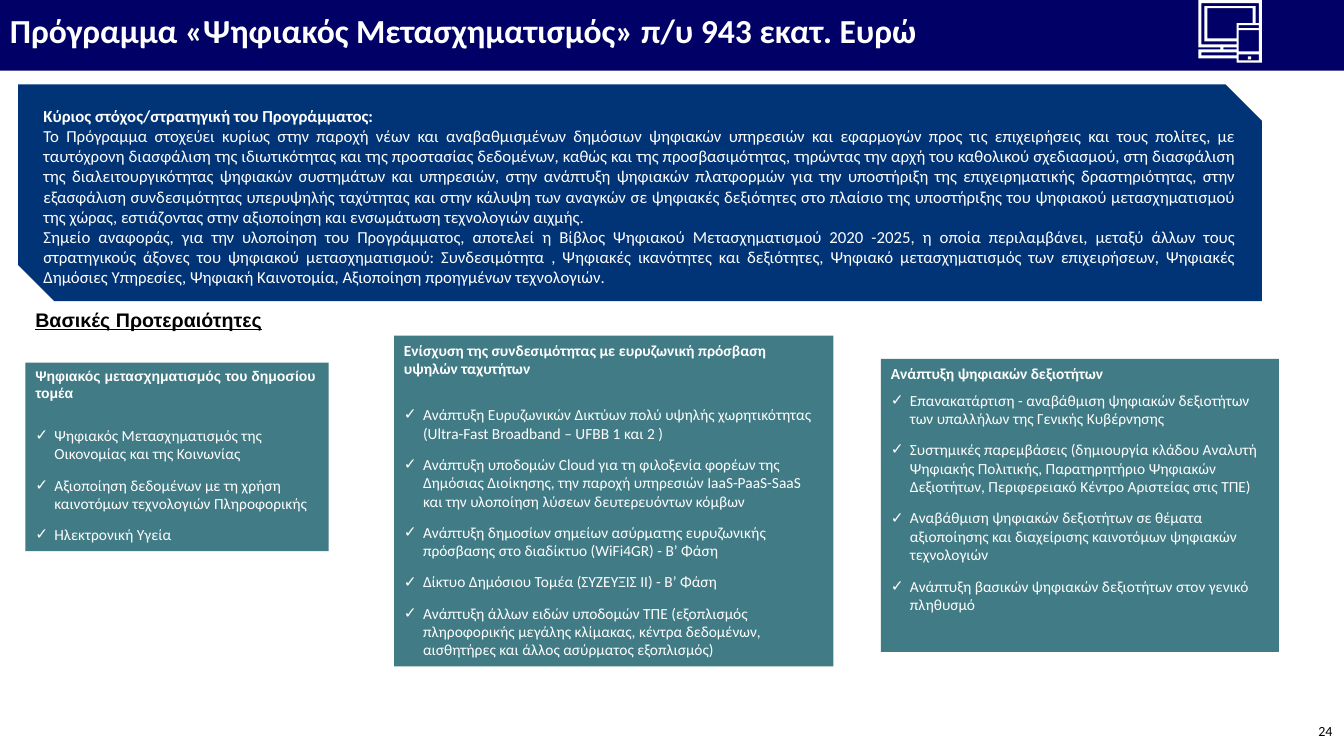
from dataclasses import dataclass

from lxml import etree
from pptx import Presentation
from pptx.dml.color import RGBColor
from pptx.enum.shapes import MSO_SHAPE
from pptx.enum.text import MSO_ANCHOR, MSO_AUTO_SIZE, PP_ALIGN
from pptx.oxml.ns import qn
from pptx.util import Cm, Pt

LEFT, RIGHT, JUSTIFY = PP_ALIGN.LEFT, PP_ALIGN.RIGHT, PP_ALIGN.JUSTIFY
TOP, MIDDLE = MSO_ANCHOR.TOP, MSO_ANCHOR.MIDDLE
NO_AUTOFIT = MSO_AUTO_SIZE.NONE
RECT, SNIPPED = MSO_SHAPE.RECTANGLE, MSO_SHAPE.SNIP_2_DIAG_RECTANGLE

WHITE, BLACK, NAVY, BLUE, TEAL = "FFFFFF", "000000", "000066", "013476", "417B85"
BULLET_INDENT = Cm(0.48)


@dataclass
class Box:
    left: float
    top: float
    width: float
    height: float


@dataclass
class Priority:
    idx: int
    box: Box
    heading: str
    font: str
    size: float
    first_gap: float
    items: list[str]


PRIORITIES = [
    Priority(2, Box(0.64, 9.14, 7.64, 4.75),
             "Ψηφιακός μετασχηματισμός του δημοσίου τομέα", "Arial", 10, 17.5, [
                 "Ψηφιακός Μετασχηματισμός της Οικονομίας και της Κοινωνίας",
                 "Αξιοποίηση δεδομένων με τη χρήση καινοτόμων τεχνολογιών Πληροφορικής",
                 "Ηλεκτρονική Υγεία"]),
    Priority(3, Box(9.93, 8.46, 11.07, 8.33),
             "Ενίσχυση της συνδεσιμότητας με ευρυζωνική πρόσβαση υψηλών ταχυτήτων",
             "Calibri", 11, 19.5, [
                 "Ανάπτυξη Ευρυζωνικών Δικτύων πολύ υψηλής χωρητικότητας "
                 "(Ultra-Fast Broadband – UFBB 1 και 2 )",
                 "Ανάπτυξη υποδομών Cloud για τη φιλοξενία φορέων της Δημόσιας Διοίκησης, "
                 "την παροχή υπηρεσιών IaaS-PaaS-SaaS και την υλοποίηση λύσεων "
                 "δευτερευόντων κόμβων",
                 "Ανάπτυξη δημοσίων σημείων ασύρματης ευρυζωνικής πρόσβασης στο διαδίκτυο "
                 "(WiFi4GR) - Β’ Φάση",
                 "Δίκτυο Δημόσιου Τομέα (ΣΥΖΕΥΞΙΣ ΙΙ) - Β’ Φάση",
                 "Ανάπτυξη άλλων ειδών υποδομών ΤΠΕ (εξοπλισμός πληροφορικής μεγάλης "
                 "κλίμακας, κέντρα δεδομένων, αισθητήρες και άλλος ασύρματος εξοπλισμός)"]),
    Priority(4, Box(22.2, 9.04, 10.03, 7.39),
             "Ανάπτυξη ψηφιακών δεξιοτήτων", "Calibri", 11, 6, [
                 "Επανακατάρτιση - αναβάθμιση ψηφιακών δεξιοτήτων των υπαλλήλων της "
                 "Γενικής Κυβέρνησης",
                 "Συστημικές παρεμβάσεις (δημιουργία κλάδου Αναλυτή Ψηφιακής Πολιτικής, "
                 "Παρατηρητήριο Ψηφιακών Δεξιοτήτων, Περιφερειακό Κέντρο Αριστείας στις ΤΠΕ)",
                 "Αναβάθμιση ψηφιακών δεξιοτήτων σε θέματα αξιοποίησης και διαχείρισης "
                 "καινοτόμων ψηφιακών τεχνολογιών",
                 "Ανάπτυξη βασικών ψηφιακών δεξιοτήτων στον γενικό πληθυσμό"]),
]

GOAL_HEADING = "Κύριος στόχος/στρατηγική του Προγράμματος:"
GOAL_TEXTS = [
    "Το Πρόγραμμα στοχεύει κυρίως στην παροχή νέων και αναβαθμισμένων δημόσιων ψηφιακών "
    "υπηρεσιών και εφαρμογών προς τις επιχειρήσεις και τους πολίτες, με ταυτόχρονη "
    "διασφάλιση της ιδιωτικότητας και της προστασίας δεδομένων, καθώς και της "
    "προσβασιμότητας, τηρώντας την αρχή του καθολικού σχεδιασμού, στη διασφάλιση της "
    "διαλειτουργικότητας ψηφιακών συστημάτων και υπηρεσιών, στην ανάπτυξη ψηφιακών "
    "πλατφορμών για την υποστήριξη της επιχειρηματικής δραστηριότητας, στην εξασφάλιση "
    "συνδεσιμότητας υπερυψηλής ταχύτητας και στην κάλυψη των αναγκών σε ψηφιακές "
    "δεξιότητες στο πλαίσιο της υποστήριξης του ψηφιακού μετασχηματισμού της χώρας, "
    "εστιάζοντας στην αξιοποίηση και ενσωμάτωση τεχνολογιών αιχμής.",
    "Σημείο αναφοράς, για την υλοποίηση του Προγράμματος, αποτελεί η Βίβλος Ψηφιακού "
    "Μετασχηματισμού 2020 -2025, η οποία περιλαμβάνει, μεταξύ άλλων τους στρατηγικούς "
    "άξονες του ψηφιακού μετασχηματισμού: Συνδεσιμότητα , Ψηφιακές ικανότητες και "
    "δεξιότητες, Ψηφιακό μετασχηματισμός των επιχειρήσεων, Ψηφιακές Δημόσιες Υπηρεσίες, "
    "Ψηφιακή Καινοτομία, Αξιοποίηση προηγμένων τεχνολογιών.",
]


def rgb(value: str) -> RGBColor:
    return RGBColor.from_string(value)


def paint(sp, color: str) -> None:
    sp.fill.solid()
    sp.fill.fore_color.rgb = rgb(color)
    sp.line.fill.background()


def place(sp, box: Box) -> None:
    sp.left, sp.top = Cm(box.left), Cm(box.top)
    sp.width, sp.height = Cm(box.width), Cm(box.height)


def frame(sp, anchor=TOP, margin_x: float = 0.25, margin_y: float = 0.13):
    tf = sp.text_frame
    tf.word_wrap = True
    tf.auto_size = NO_AUTOFIT
    tf.vertical_anchor = anchor
    tf.margin_left = tf.margin_right = Cm(margin_x)
    tf.margin_top = tf.margin_bottom = Cm(margin_y)
    return tf


def write(p, text: str, size: float, color: str = WHITE, font: str = "Calibri",
          bold: bool = False, align=LEFT, before: float = 0, after: float = 0,
          bullet: bool = False):
    pPr = p._p.get_or_add_pPr()
    indent = BULLET_INDENT if bullet else 0
    pPr.set("marL", str(indent))
    pPr.set("indent", str(-indent))
    if bullet:
        clr = etree.SubElement(pPr, qn("a:buClr"))
        etree.SubElement(clr, qn("a:srgbClr"), val=color)
        etree.SubElement(pPr, qn("a:buChar"), char="✓")
    else:
        etree.SubElement(pPr, qn("a:buNone"))
    p.alignment = align
    p.space_before, p.space_after = Pt(before), Pt(after)
    r = p.add_run()
    r.text = text
    r.font.size, r.font.name, r.font.bold = Pt(size), font, bold
    r.font.color.rgb = rgb(color)
    return r


def add_shape(shapes, kind, box: Box, color: str):
    sp = shapes.add_shape(kind, Cm(box.left), Cm(box.top), Cm(box.width), Cm(box.height))
    sp.shadow.inherit = False
    paint(sp, color)
    return sp


def fill_priority(sp, item: Priority) -> None:
    place(sp, item.box)
    paint(sp, TEAL)
    tf = frame(sp)
    write(tf.paragraphs[0], item.heading, item.size, font=item.font, bold=True)
    for i, text in enumerate(item.items):
        write(tf.add_paragraph(), text, 11, before=6 if i else item.first_gap,
              after=3, bullet=True)


def corners(left: int, top: int, right: int, bottom: int) -> list[tuple[int, int]]:
    return [(left, top), (right, top), (right, bottom), (left, bottom)]


def draw_devices(shapes) -> None:
    # Contours in hundredths of an inch from the icon's corner
    contours = [
        [(63, 0), (0, 0), (0, 47), (22, 47), (22, 49), (0, 49), (0, 58), (38, 58),
         (38, 62), (63, 62)],
        [(60, 23), (57, 23), (57, 6), (6, 6), (6, 41), (38, 41), (38, 44), (3, 44),
         (3, 3), (60, 3)],
        [(38, 38), (9, 38), (9, 8), (54, 8), (54, 23), (38, 23)],
        *(corners(40, top, 60, bottom) for top, bottom in [(25, 28), (30, 51), (54, 60)]),
        corners(25, 47, 38, 49),
        corners(3, 52, 38, 55),
    ]
    outline = shapes.build_freeform(*contours[0][0], scale=Cm(2.54) / 100)
    for i, points in enumerate(contours):
        if i:
            outline.move_to(*points[0])
        outline.add_line_segments(points[1:], close=True)
    sp = outline.convert_to_shape(Cm(30.2), 0)
    sp.shadow.inherit = False
    paint(sp, WHITE)
    add_shape(shapes, RECT, Box(31.45, 1.42, 0.08, 0.08), WHITE)


def main() -> None:
    prs = Presentation()
    prs.slide_width, prs.slide_height = Cm(33.87), Cm(19.05)
    slide = prs.slides.add_slide(prs.slide_layouts[4])
    shapes = slide.shapes
    bodies = {sp.placeholder_format.idx: sp for sp in slide.placeholders}

    # Title band
    title = shapes.title
    place(title, Box(0, -0.15, 33.87, 1.93))
    paint(title, NAVY)
    p = frame(title, MIDDLE, 0.25, 0.25).paragraphs[0]
    write(p, "Πρόγραμμα «Ψηφιακός Μετασχηματισμός» π/υ 943 εκατ. Ευρώ", 24, bold=True)
    p.line_spacing = 0.9
    draw_devices(shapes)

    # Main goal
    goal = add_shape(shapes, SNIPPED, Box(0.46, 2.13, 31.34, 5.46), BLUE)
    tf = frame(goal, TOP, 0.18, 0.08)
    write(tf.paragraphs[0], GOAL_HEADING, 12, bold=True)
    for text in GOAL_TEXTS:
        write(tf.add_paragraph(), text, 12, align=JUSTIFY)

    # Priorities
    place(bodies[1], Box(0.64, 7.62, 10.36, 0.86))
    r = write(frame(bodies[1]).paragraphs[0], "Βασικές Προτεραιότητες", 14, BLACK,
              "Arial", bold=True)
    r.font.underline = True
    for item in PRIORITIES:
        fill_priority(bodies[item.idx], item)

    # Slide number
    number = shapes.add_textbox(Cm(31.8), Cm(17.7), Cm(2.03), Cm(1.45))
    write(frame(number, MIDDLE, 0.25, 0.25).paragraphs[0], "24", 10, BLACK, align=RIGHT)

    prs.save("out.pptx")


if __name__ == "__main__":
    main()
